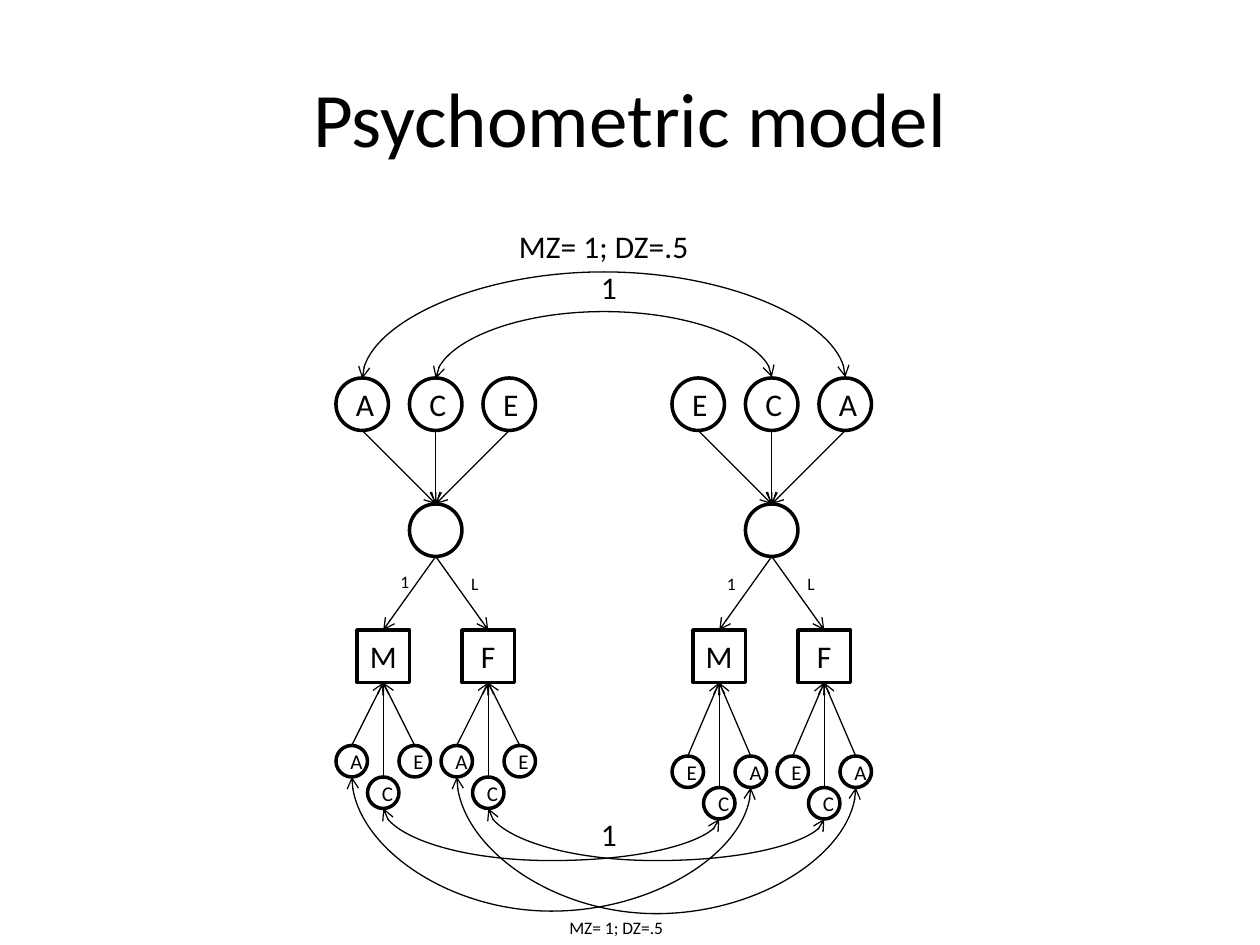
from lxml import etree
from pptx import Presentation
from pptx.dml.color import RGBColor
from pptx.enum.shapes import MSO_CONNECTOR, MSO_SHAPE
from pptx.enum.text import MSO_ANCHOR, MSO_AUTO_SIZE, PP_ALIGN
from pptx.oxml.ns import qn
from pptx.util import Inches, Pt

BLACK = RGBColor(0, 0, 0)
WHITE = RGBColor(255, 255, 255)
CELL = Inches(1 / 12)  # step of the diagram grid
NODE = 5 * CELL
SMALL = 3 * CELL
TOP, BOTTOM = 0, 2  # connection sites


def write(frame, text, size, align=None):
    para = frame.paragraphs[0]
    para.alignment = align
    span = para.add_run()
    span.text = text
    font_values = {"name": "Calibri", "size": Pt(size)}
    for name, value in font_values.items():
        setattr(span.font, name, value)
    span.font.color.rgb = BLACK


def add_label(page, left, top, width, height, text, size):
    box = page.shapes.add_textbox(*map(Inches, (left, top, width, height)))
    frame_values = {"word_wrap": False, "auto_size": MSO_AUTO_SIZE.SHAPE_TO_FIT_TEXT}
    for name, value in frame_values.items():
        setattr(box.text_frame, name, value)
    write(box.text_frame, text, size)


def add_node(page, kind, left, top, side, text="", size=18):
    node = page.shapes.add_shape(kind, left, top, side, side)
    node.shadow.inherit = False
    node.fill.solid()
    node.fill.fore_color.rgb = WHITE
    node.line.color.rgb = BLACK
    node.line.width = Pt(2)
    if text:
        write(node.text_frame, text, size, PP_ALIGN.CENTER)
    return node


def style_path(connector, ends):
    connector.line.color.rgb = BLACK
    connector.line.width = Pt(0.75)
    line = connector.line._get_or_add_ln()
    for end in ends:
        etree.SubElement(line, qn(f"a:{end}"), type="arrow")
    etree.SubElement(connector._element.spPr, qn("a:effectLst"))


def middle(node):
    return node.left + node.width // 2


def add_path(page, start, end, start_site, end_site):
    """Straight arrow between the top or bottom middles of two nodes."""
    path = page.shapes.add_connector(MSO_CONNECTOR.STRAIGHT, 0, 0, 0, 0)
    if start_site == BOTTOM:  # bottom of a circle is not site 2
        path.begin_x, path.begin_y = middle(start), start.top + start.height
    else:
        path.begin_connect(start, start_site)
    path.end_connect(end, end_site)
    style_path(path, ["tailEnd"])


def add_correlation(page, start, end, site, reach):
    """Two-headed curve that leaves both nodes on one side and turns at reach."""
    drop = start.height if site == BOTTOM else 0
    x1, y1 = middle(start), start.top + drop
    x2, y2 = middle(end), end.top + drop
    thin, span = max(abs(y2 - y1), Inches(0.01)), x2 - x1
    left, top = (x1 + x2 - thin) // 2, (y1 + y2 - span) // 2
    curve = page.shapes.add_connector(
        MSO_CONNECTOR.CURVE, left, top, left + thin, top + span)
    properties = curve._element.spPr
    frame = properties.find(qn("a:xfrm"))
    frame.set("flipH", "1")
    if site == TOP:
        frame.set("flipV", "1")
    frame.set("rot", str((90 if site == TOP else 270) * 60000))
    bend = round(abs(reach - y1) / thin * 100000)
    geometry = properties.find(qn("a:prstGeom"))
    guides = geometry.find(qn("a:avLst"))
    if guides is None:
        guides = etree.SubElement(geometry, qn("a:avLst"))
    etree.SubElement(guides, qn("a:gd"), name="adj1", fmla=f"val {bend}")
    style_path(curve, ["headEnd", "tailEnd"])


def add_title(page, left, top, width, height):
    box = page.shapes.add_textbox(left, top, width, height)
    box.text_frame.word_wrap = True
    box.text_frame.vertical_anchor = MSO_ANCHOR.MIDDLE
    write(box.text_frame, "Psychometric model", 44, PP_ALIGN.CENTER)


def add_twin(page, left, top, letters, residual_top):
    """Draw one twin and return its nodes by name."""
    nodes = {}
    latent = add_node(page, MSO_SHAPE.OVAL, left + 7 * CELL, top + 12 * CELL, NODE)
    # Common factors
    for index, letter in enumerate(letters):
        factor = add_node(page, MSO_SHAPE.OVAL, left + 7 * index * CELL, top, NODE, letter)
        add_path(page, factor, latent, BOTTOM, TOP)
        nodes[letter] = factor
    # Measured variables, each with its own residual factors
    for column, name in ((0, "M"), (10, "F")):
        measure = add_node(page, MSO_SHAPE.RECTANGLE, left + (column + 2) * CELL,
                           top + 24 * CELL, NODE, name)
        add_path(page, latent, measure, BOTTOM, TOP)
        for index, letter in enumerate(letters):
            lowered = SMALL if index == 1 else 0
            residual = add_node(page, MSO_SHAPE.OVAL, left + (column + 3 * index) * CELL,
                                residual_top + lowered, SMALL, letter, 12)
            add_path(page, residual, measure, TOP, BOTTOM)
            nodes[name + letter] = residual
    return nodes


def add_correlations(page, first, second):
    for name, site, reach in (
        ("A", TOP, 2.14), ("C", TOP, 2.46),
        ("MC", BOTTOM, 6.83), ("FC", BOTTOM, 6.83),
        ("FA", BOTTOM, 7.25), ("MA", BOTTOM, 7.23),
    ):
        add_correlation(page, first[name], second[name], site, Inches(reach))


def add_labels(page):
    for label in (
        (4.02, 1.75, 1.56, 0.4, "MZ= 1; DZ=.5", 18),
        (4.67, 2.08, 0.33, 0.4, "1", 18),
        (3.08, 4.48, 0.27, 0.27, "1", 10),
        (3.64, 4.5, 0.26, 0.27, "L", 10),
        (5.67, 4.5, 0.27, 0.27, "1", 10),
        (6.31, 4.5, 0.26, 0.27, "L", 10),
        (4.67, 6.42, 0.33, 0.4, "1", 18),
        (4.42, 7.23, 0.96, 0.27, "MZ= 1; DZ=.5", 10),
    ):
        add_label(page, *label)


def main():
    deck = Presentation()
    deck.slide_width, deck.slide_height = Inches(10), Inches(7.5)
    page = deck.slides.add_slide(deck.slide_layouts[6])
    add_title(page, Inches(0.5), Inches(0.3), Inches(9), Inches(1.25))
    first = add_twin(page, 32 * CELL, Inches(3), "ACE", 71 * CELL)
    second = add_twin(page, 64 * CELL, Inches(3), "ECA", 72 * CELL)
    add_correlations(page, first, second)
    add_labels(page)
    deck.save("out.pptx")


if __name__ == "__main__":
    main()
